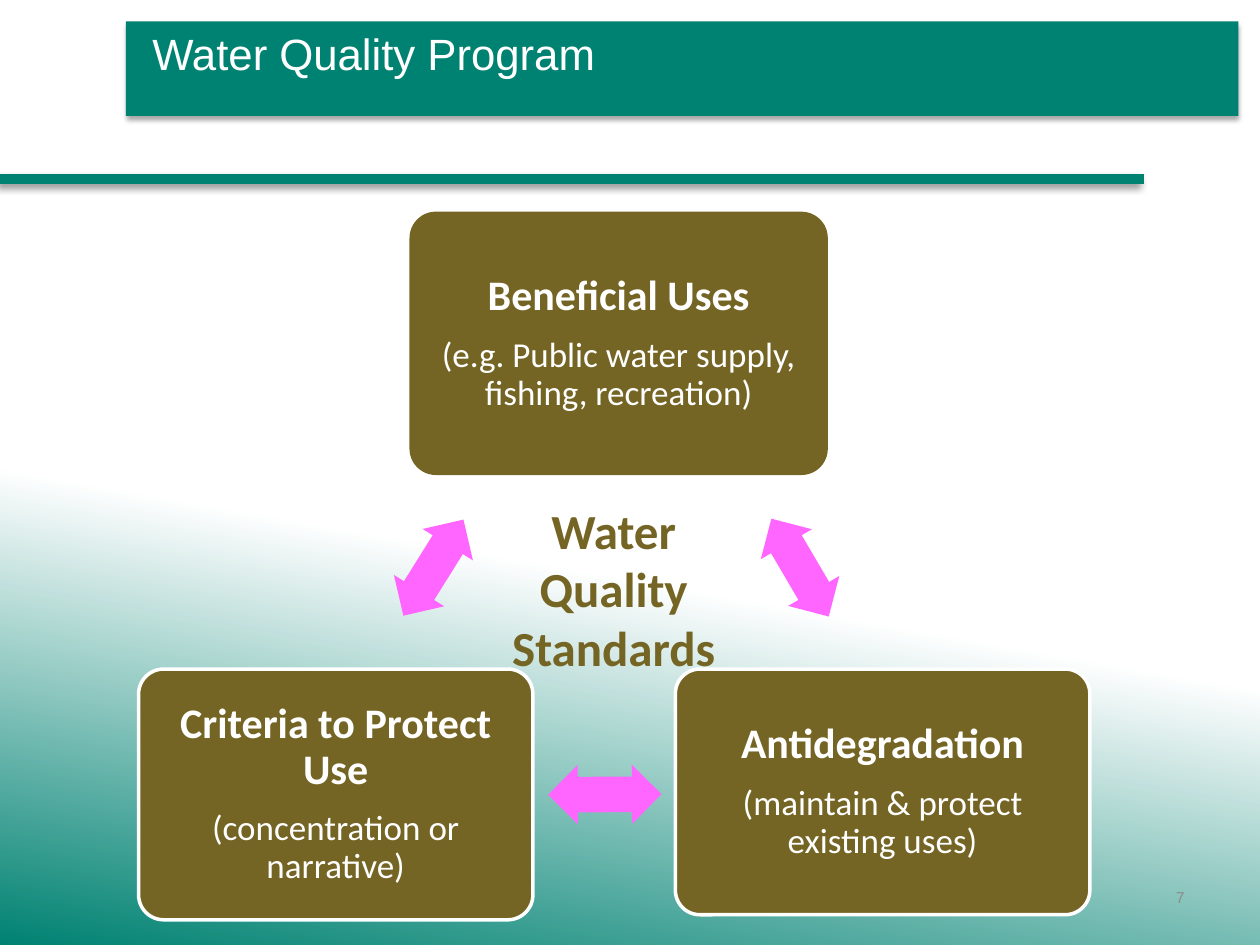
from lxml.etree import SubElement
from pptx import Presentation
from pptx.dml.color import RGBColor
from pptx.enum.shapes import MSO_CONNECTOR, MSO_SHAPE
from pptx.enum.text import MSO_ANCHOR, PP_ALIGN
from pptx.oxml.ns import qn
from pptx.util import Inches, Pt

COLORS = {
    "teal": "008272",
    "olive": "756525",
    "pink": "FF66FF",
    "gray": "8C8C8C",
    "white": "FFFFFF",
    "black": "000000",
}


def rgb(name):
    return RGBColor.from_string(COLORS[name])


class Builder:
    font = "Calibri"
    heading_font = "Arial"

    def __init__(self, deck):
        self.page = deck.slides.add_slide(deck.slide_layouts[6])

    def background(self, start, end, begin, angle):
        fill = self.page.background.fill
        fill.gradient()
        fill.gradient_angle = angle
        for stop, name, position in zip(fill.gradient_stops, (start, end), (begin, 1)):
            stop.color.rgb = rgb(name)
            stop.position = position

    def shape(self, kind, place, fill, outline=None, adjustments=(), rotation=0):
        shape = self.page.shapes.add_shape(kind, *map(Inches, place))
        shape.shadow.inherit = False
        shape.fill.solid()
        shape.fill.fore_color.rgb = rgb(fill)
        if outline:
            shape.line.color.rgb = rgb(outline)
            shape.line.width = Pt(2)
        else:
            shape.line.fill.background()
        for index, value in enumerate(adjustments):
            shape.adjustments[index] = value
        shape.rotation = rotation
        return shape

    def shadow(self, item, blur, distance, angle, opacity):
        properties = item._element.spPr
        effects = properties.find(qn("a:effectLst"))
        if effects is None:
            effects = SubElement(properties, qn("a:effectLst"))
        outer = SubElement(effects, qn("a:outerShdw"), blurRad=str(Pt(blur)),
                           dist=str(Pt(distance)), dir=str(angle * 60000), rotWithShape="0")
        color = SubElement(outer, qn("a:srgbClr"), val=COLORS["black"])
        SubElement(color, qn("a:alpha"), val=str(opacity * 1000))

    def line(self, start, end, color, width):
        line = self.page.shapes.add_connector(
            MSO_CONNECTOR.STRAIGHT, *map(Inches, start + end))
        line.line.color.rgb = rgb(color)
        line.line.width = Pt(width)
        return line

    def frame(self, box, insets, anchor):
        frame = box.text_frame
        frame.word_wrap = True
        frame.vertical_anchor = anchor
        (frame.margin_left, frame.margin_top,
         frame.margin_right, frame.margin_bottom) = map(Inches, insets)
        return frame

    def add_text(self, para, text, size, color, align, bold=False, font=None):
        para.alignment = align
        span = para.add_run()
        span.text = text
        span.font.name = font or self.font
        span.font.size = Pt(size)
        span.font.bold = bold
        span.font.color.rgb = rgb(color)

    def label(self, place, text, size, color, align, anchor, bold=False, font=None):
        box = self.page.shapes.add_textbox(*map(Inches, place))
        frame = self.frame(box, (0.1, 0.05, 0.1, 0.05), anchor)
        self.add_text(frame.paragraphs[0], text, size, color, align, bold, font)

    def title(self, place, text):
        bar = self.shape(MSO_SHAPE.RECTANGLE, place, "teal")
        self.shadow(bar, 3.1, 1.8, 90, 35)
        frame = self.frame(bar, (0.21, 0.05, 0.21, 0.24), MSO_ANCHOR.MIDDLE)
        para = frame.paragraphs[0]
        para.line_spacing = 0.9
        self.add_text(para, text, 25, "white", PP_ALIGN.LEFT, font=self.heading_font)

    def card(self, place, heading, detail, outline=None):
        card = self.shape(MSO_SHAPE.ROUNDED_RECTANGLE, place, "olive", outline, (0.1,))
        frame = self.frame(card, (0.1,) * 4, MSO_ANCHOR.MIDDLE)
        first, second = frame.paragraphs[0], frame.add_paragraph()
        for para, text, size, bold in ((first, heading, 24, True), (second, detail, 20, False)):
            para.line_spacing = 0.9
            para.space_after = Pt(round(size * 0.43))
            self.add_text(para, text, size, "white", PP_ALIGN.CENTER, bold)

    def arrow(self, left, top, rotation):
        self.shape(MSO_SHAPE.LEFT_RIGHT_ARROW, (left, top, 0.9, 0.47), "pink",
                   adjustments=(0.6, 0.5), rotation=rotation)


def main():
    deck = Presentation()
    deck.slide_width, deck.slide_height = Inches(10), Inches(7.5)
    builder = Builder(deck)
    builder.background("white", "teal", 0.59, 260)
    builder.title((1, 0.17, 8.83, 0.75), "Water Quality Program")
    rule = builder.line((0, 1.42), (9.08, 1.42), "teal", 6)
    builder.shadow(rule, 4, 3, 135, 40)
    builder.label((7.17, 6.92, 2.33, 0.4), "7", 9, "gray", PP_ALIGN.RIGHT,
                  MSO_ANCHOR.MIDDLE, font=builder.heading_font)

    builder.card((3.25, 1.68, 3.32, 2.09), "Beneficial Uses",
                 "(e.g. Public water supply, fishing, recreation)")
    builder.card((5.36, 5.31, 3.29, 1.95), "Antidegradation",
                 "(maintain & protect existing uses)", "white")
    builder.card((1.1, 5.31, 3.13, 1.99), "Criteria to Protect Use",
                 "(concentration or narrative)", "white")
    for left, top, rotation in ((5.9, 4.27, 59.6), (4.35, 6.07, 179.7), (2.99, 4.27, 302)):
        builder.arrow(left, top, rotation)
    builder.label((3.83, 3.92, 2.08, 1.51), "Water Quality Standards", 28, "olive",
                  PP_ALIGN.CENTER, MSO_ANCHOR.TOP, bold=True)
    deck.save("out.pptx")


if __name__ == "__main__":
    main()
